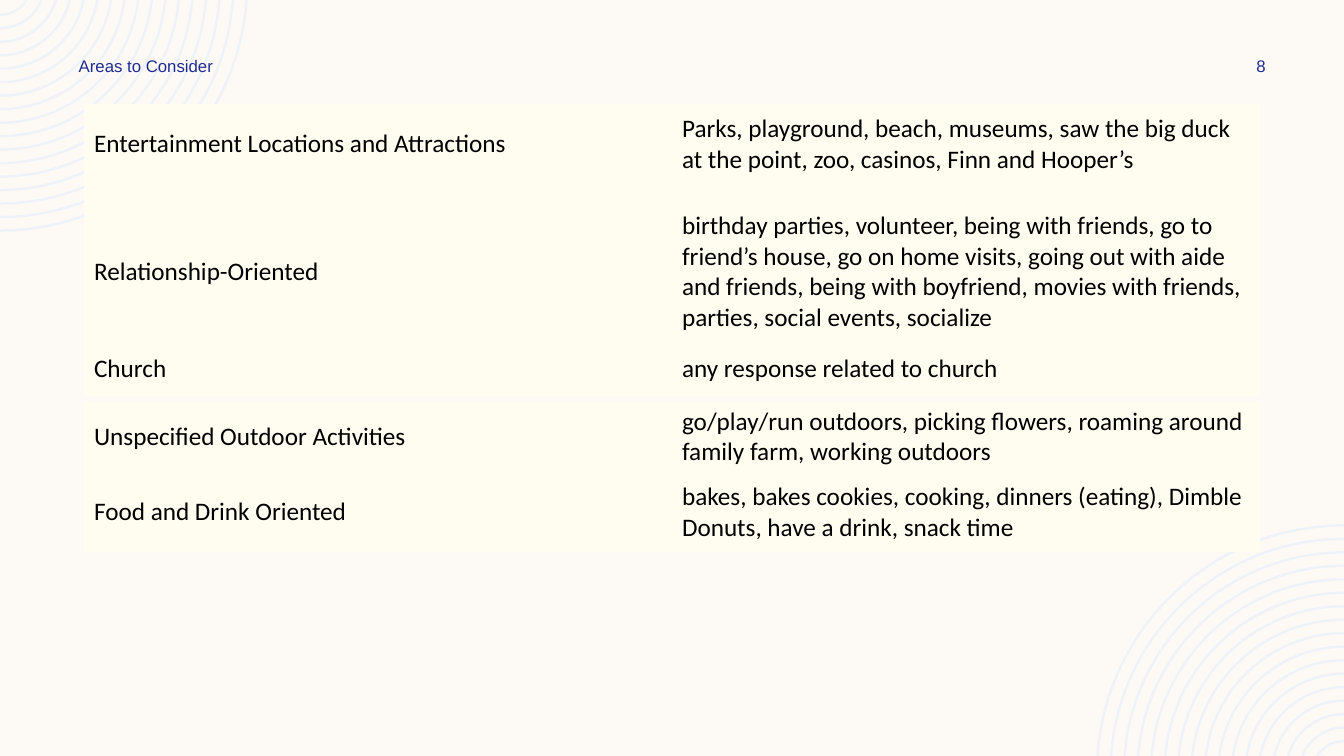
"""Build the "Areas to Consider" slide: grouped activity tables between corner rings."""
from dataclasses import dataclass
from math import asin, cos, pi, sin, tan

from lxml import etree
from pptx import Presentation
from pptx.dml.color import RGBColor
from pptx.enum.text import MSO_ANCHOR, PP_ALIGN
from pptx.oxml.ns import qn
from pptx.util import Pt

MIDDLE = MSO_ANCHOR.MIDDLE
LEFT, CENTER = PP_ALIGN.LEFT, PP_ALIGN.CENTER

HEADING = "Areas to Consider"
PAGE_NUMBER = "8"
AREA_GROUPS = [
    {"top": 74.5, "areas": [
        ("Entertainment Locations and Attractions",
         "Parks, playground, beach, museums, saw the big duck at the point, "
         "zoo, casinos, Finn and Hooper’s", 57),
        ("Relationship-Oriented",
         "birthday parties, volunteer, being with friends, go to friend’s house, "
         "go on home visits, going out with aide and friends, being with boyfriend, "
         "movies with friends, parties, social events, socialize", 125.5),
    ]},
    {"top": 243.5, "areas": [
        ("Church", "any response related to church", 39.5),
    ]},
    {"top": 286.5, "areas": [
        ("Unspecified Outdoor Activities",
         "go/play/run outdoors, picking flowers, roaming around family farm, "
         "working outdoors", 51),
        ("Food and Drink Oriented",
         "bakes, bakes cookies, cooking, dinners (eating), Dimble Donuts, "
         "have a drink, snack time", 56.5),
    ]},
]

SLIDE_WIDTH, SLIDE_HEIGHT = 960, 540
TABLE_LEFT, COLUMN_WIDTH = 60, 420
HEADER_TOP, HEADER_HEIGHT = 36, 21.6
RING_COUNT, RING_STEP, RING_WIDTH = 17, 9.63, 1.75
RING_OUTER, RING_RISE = 176.4, 11.7
PLAIN_TABLE_STYLE = "{2D5ABB26-0587-4C30-8999-92F81FD0307C}"


@dataclass(frozen=True)
class Theme:
    background: RGBColor = RGBColor(0xFD, 0xFA, 0xF6)
    rings: RGBColor = RGBColor(0xEE, 0xF3, 0xFA)
    header: RGBColor = RGBColor(0x1F, 0x2C, 0x8F)
    cell: RGBColor = RGBColor(0xFF, 0xFC, 0xF0)
    body: RGBColor = RGBColor(0, 0, 0)
    header_font: str = "Arial"
    body_font: str = "Calibri"
    header_size: float = 12
    body_size: float = 18


THEME = Theme()


def style_text(frame, font_name, size, color, align=LEFT):
    for paragraph in frame.paragraphs:
        paragraph.alignment = align
        paragraph.font.name = font_name
        paragraph.font.size = Pt(size)
        paragraph.font.color.rgb = color


def place_header(header, text, left, width, align):
    header.left, header.top = Pt(left), Pt(HEADER_TOP)
    header.width, header.height = Pt(width), Pt(HEADER_HEIGHT)
    frame = header.text_frame
    frame.text = text
    frame.word_wrap = True
    frame.vertical_anchor = MIDDLE
    style_text(frame, THEME.header_font, THEME.header_size, THEME.header, align)


def arc_controls(radius):
    start = asin(RING_RISE / radius)
    reach = radius * 4 / 3 * tan((pi / 2 - start) / 4)
    start_x, bottom = radius * cos(start), radius - RING_RISE
    return [(start_x, 0),
            (start_x - reach * sin(start), reach * cos(start)),
            (reach, bottom),
            (0, bottom)]


def curve_segments(outline):
    segments = list(outline.element.iter(qn("a:lnTo")))
    for first, second, last in zip(segments[::3], segments[1::3], segments[2::3]):
        curve = etree.Element(qn("a:cubicBezTo"))
        first.addprevious(curve)
        for segment in (first, second, last):
            curve.append(segment[0])
            segment.getparent().remove(segment)


def add_rings(slide, to_corner):
    arcs = []
    for ring in range(RING_COUNT):
        controls = arc_controls(RING_OUTER - ring * RING_STEP)
        arcs.append([tuple(Pt(length) for length in to_corner(x, y)) for x, y in controls])
    builder = slide.shapes.build_freeform(*arcs[0][0])
    for arc in arcs:
        builder.move_to(*arc[0])
        builder.add_line_segments(arc[1:], close=False)
    rings = builder.convert_to_shape()
    curve_segments(rings)
    rings.shadow.inherit = False
    rings.fill.background()
    rings.line.color.rgb = THEME.rings
    rings.line.width = Pt(RING_WIDTH)
    slide.shapes.title.element.addprevious(rings.element)


def add_area_table(slide, top, areas):
    total_height = sum(height for _, _, height in areas)
    holder = slide.shapes.add_table(
        len(areas), 2, Pt(TABLE_LEFT), Pt(top), Pt(2 * COLUMN_WIDTH), Pt(total_height))
    for style in holder.element.iter(qn("a:tableStyleId")):
        style.text = PLAIN_TABLE_STYLE
    table = holder.table
    table.first_row = table.horz_banding = False
    for row, (area, examples, height) in zip(table.rows, areas):
        row.height = Pt(height)
        for cell, wording in zip(row.cells, (area, examples)):
            cell.text = wording
            cell.vertical_anchor = MIDDLE
            cell.fill.solid()
            cell.fill.fore_color.rgb = THEME.cell
            style_text(cell.text_frame, THEME.body_font, THEME.body_size, THEME.body)


def main():
    deck = Presentation()
    deck.slide_width, deck.slide_height = Pt(SLIDE_WIDTH), Pt(SLIDE_HEIGHT)
    slide = deck.slides.add_slide(deck.slide_layouts[5])
    slide.background.fill.solid()
    slide.background.fill.fore_color.rgb = THEME.background

    add_rings(slide, lambda x, y: (x, y))
    add_rings(slide, lambda x, y: (SLIDE_WIDTH - x, SLIDE_HEIGHT - y))
    place_header(slide.shapes.title, HEADING, 49, 252, LEFT)
    page_number = slide.shapes.add_textbox(0, 0, 0, 0)
    place_header(page_number, PAGE_NUMBER, 862, 77.5, CENTER)
    for group in AREA_GROUPS:
        add_area_table(slide, **group)
    deck.save("out.pptx")


if __name__ == "__main__":
    main()
